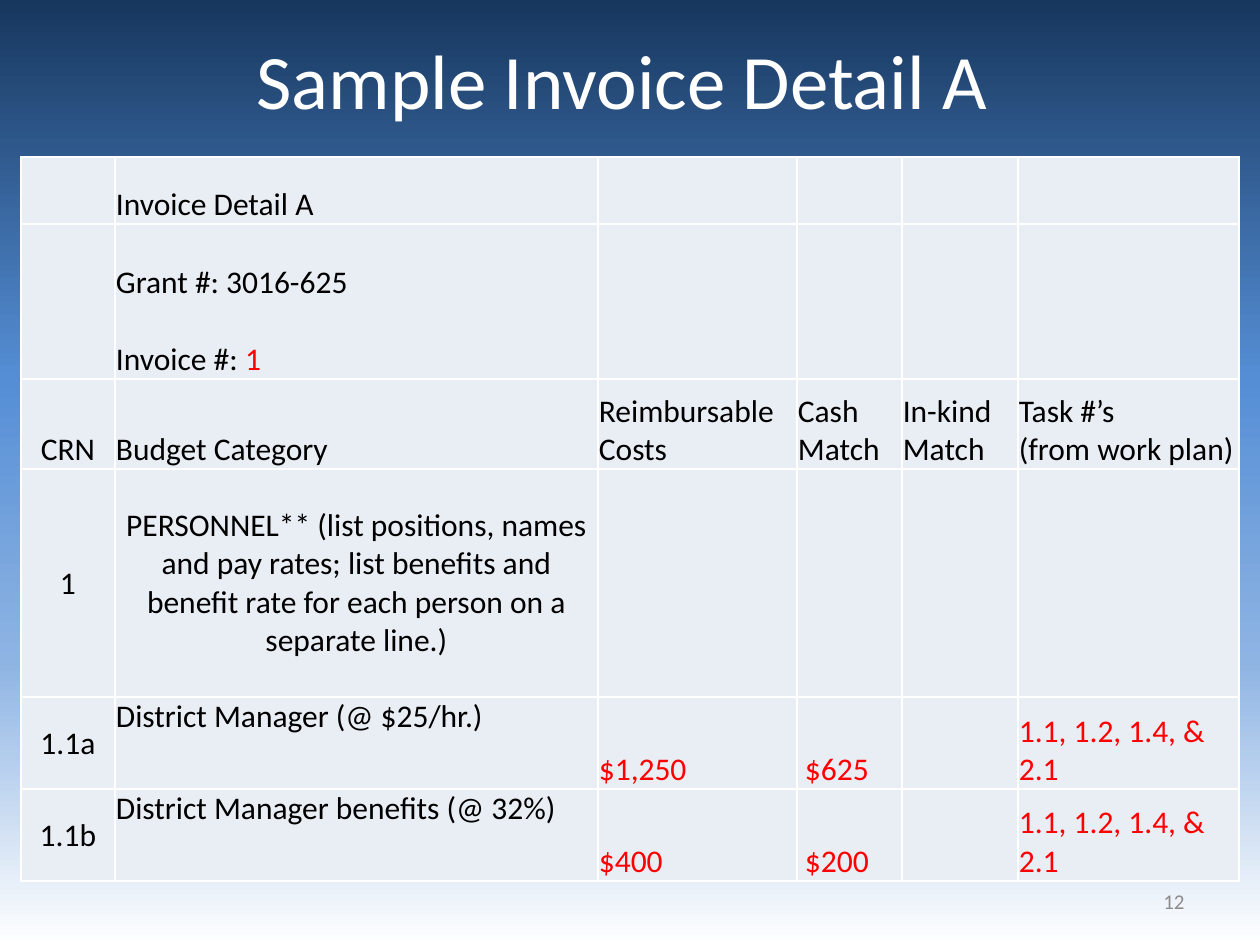
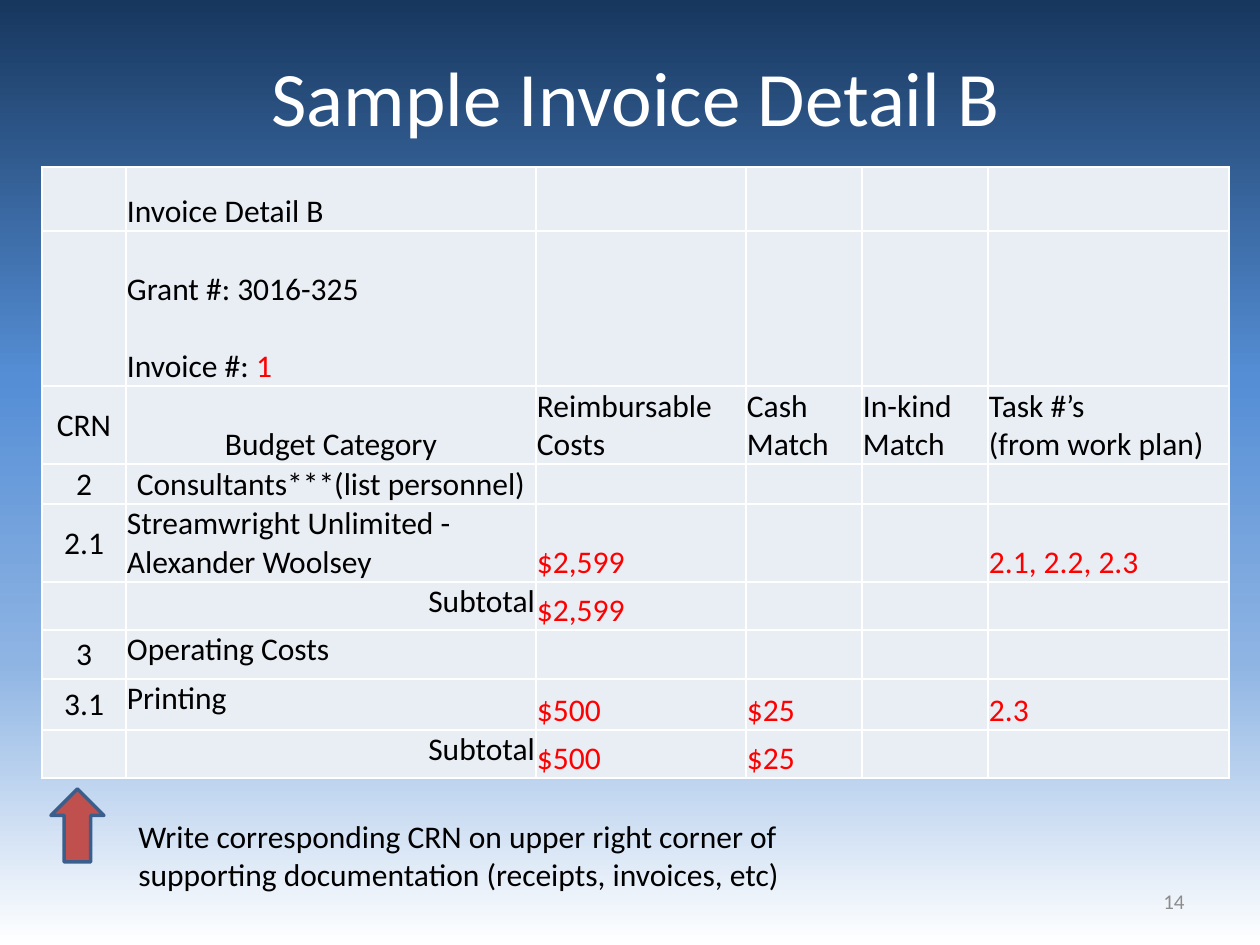
import dataclasses

import lxml.etree
import pptx
import pptx.dml.color
import pptx.enum.shapes
import pptx.enum.text
import pptx.oxml.ns
import pptx.presentation
import pptx.shapes.base
import pptx.slide
import pptx.table
import pptx.text.text
import pptx.util

PIXELS_PER_INCH = 126
SLIDE_WIDTH, SLIDE_HEIGHT = 1260, 945
TITLE_ONLY_LAYOUT = 5

Align = pptx.enum.text.PP_ALIGN
Anchor = pptx.enum.text.MSO_ANCHOR


@dataclasses.dataclass(frozen=True)
class Theme:
    font: str = "Calibri"
    title_size: int = 44
    body_size: int = 18
    number_size: int = 12
    line_height: int = 22
    white: str = "FFFFFF"
    black: str = "000000"
    entry: str = "FF0000"
    number: str = "8C8C8C"
    cell_fill: str = "E9EDF4"
    arrow_fill: str = "C0504D"
    arrow_line: str = "3A5F8C"
    background: tuple[tuple[int, str], ...] = (
        (0, "17375E"), (40, "558ED5"), (70, "8EB4E3"), (100, "FFFFFF"))


THEME = Theme()


@dataclasses.dataclass(frozen=True)
class Box:
    left: int
    top: int
    width: int
    height: int

    def emu(self) -> tuple[int, int, int, int]:
        return px(self.left), px(self.top), px(self.width), px(self.height)


@dataclasses.dataclass(frozen=True)
class Cell:
    """A table cell: printed text, followed by what the grantee fills in."""
    text: str = ""
    entry: str = ""
    align: Align = Align.LEFT
    anchor: Anchor = Anchor.BOTTOM
    gap: int = 0


@dataclasses.dataclass(frozen=True)
class InvoiceSlide:
    title: str
    title_box: Box
    number: int
    table_left: int
    table_top: int
    column_widths: list[int]
    row_heights: list[int]
    rows: list[list[Cell]]


def px(length: int) -> int:
    return pptx.util.Emu(length * 914400 // PIXELS_PER_INCH)


def rgb(color: str) -> pptx.dml.color.RGBColor:
    return pptx.dml.color.RGBColor.from_string(color)


def centred(text: str) -> Cell:
    return Cell(text, align=Align.CENTER, anchor=Anchor.MIDDLE)


def item(text: str) -> Cell:
    return Cell(text, anchor=Anchor.TOP)


def entry(text: str) -> Cell:
    return Cell(entry=text)


def heading_rows(letter: str, grant: str, crn: Cell, category: Cell) -> list[list[Cell]]:
    """The three rows that open every invoice table."""
    return [
        [Cell(), Cell(f"Invoice Detail {letter}")],
        [Cell(), Cell(f"Grant #: {grant}\nInvoice #: ", entry="1", gap=THEME.line_height)],
        [crn, category, Cell("Reimbursable Costs"), Cell("Cash Match"),
         Cell("In-kind Match"), Cell("Task #’s\n(from work plan)")],
    ]


def write(
    frame: pptx.text.text.TextFrame, text: str, *, entry_text: str = "",
    size: int = THEME.body_size, color: str = THEME.black,
    align: Align = Align.LEFT, anchor: Anchor = Anchor.TOP, gap: int = 0,
) -> None:
    """Write one paragraph per line; entry_text ends the last one in the entry colour."""
    frame.word_wrap = True
    frame.vertical_anchor = anchor
    lines = text.split("\n")
    for index, line in enumerate(lines):
        paragraph = frame.paragraphs[0] if index == 0 else frame.add_paragraph()
        paragraph.alignment = align
        if index and gap:
            paragraph.space_before = pptx.util.Pt(gap)
        pieces = [(line, color)]
        if index == len(lines) - 1:
            pieces.append((entry_text, THEME.entry))
        for piece, piece_color in pieces:
            if piece:
                run = paragraph.add_run()
                run.text = piece
                run.font.name = THEME.font
                run.font.size = pptx.util.Pt(size)
                run.font.color.rgb = rgb(piece_color)


def add_text(slide: pptx.slide.Slide, box: Box, text: str, **text_format) -> None:
    write(slide.shapes.add_textbox(*box.emu()).text_frame, text, **text_format)


def add_solid_fill(parent: lxml.etree.ElementBase, color: str) -> None:
    qn = pptx.oxml.ns.qn
    fill = lxml.etree.SubElement(parent, qn("a:solidFill"))
    lxml.etree.SubElement(fill, qn("a:srgbClr"), val=color)


def set_background(master: pptx.slide.SlideMaster) -> None:
    qn = pptx.oxml.ns.qn
    fill = master.background.fill
    fill.gradient()
    fill.gradient_angle = 270
    stops = master.element.xpath(".//p:bg//a:gsLst")[0]
    for stop in list(stops):
        stops.remove(stop)
    for percent, color in THEME.background:
        stop = lxml.etree.SubElement(stops, qn("a:gs"), pos=str(percent * 1000))
        lxml.etree.SubElement(stop, qn("a:srgbClr"), val=color)


def style_cell(cell: pptx.table._Cell) -> None:
    cell.margin_left = cell.margin_top = cell.margin_right = px(1)
    cell.margin_bottom = 0
    properties = cell._tc.get_or_add_tcPr()
    for side in ("L", "R", "T", "B"):
        border = lxml.etree.SubElement(
            properties, pptx.oxml.ns.qn(f"a:ln{side}"), w=str(pptx.util.Pt(1)))
        add_solid_fill(border, THEME.white)
    cell.fill.solid()
    cell.fill.fore_color.rgb = rgb(THEME.cell_fill)


def add_invoice_table(slide: pptx.slide.Slide, invoice: InvoiceSlide) -> None:
    box = Box(invoice.table_left, invoice.table_top,
              sum(invoice.column_widths), sum(invoice.row_heights))
    table = slide.shapes.add_table(
        len(invoice.row_heights), len(invoice.column_widths), *box.emu()).table
    table.first_row = table.horz_banding = False
    for column, width in zip(table.columns, invoice.column_widths):
        column.width = px(width)
    for row, height, contents in zip(table.rows, invoice.row_heights, invoice.rows):
        row.height = px(height)
        for cell in row.cells:
            style_cell(cell)
        for cell, content in zip(row.cells, contents):
            write(cell.text_frame, content.text, entry_text=content.entry,
                  align=content.align, gap=content.gap)
            cell.vertical_anchor = content.anchor


def add_invoice_slide(
    presentation: pptx.presentation.Presentation, invoice: InvoiceSlide,
) -> pptx.slide.Slide:
    slide = presentation.slides.add_slide(presentation.slide_layouts[TITLE_ONLY_LAYOUT])
    title = slide.shapes.title
    title.left, title.top, title.width, title.height = invoice.title_box.emu()
    write(title.text_frame, invoice.title, size=THEME.title_size, color=THEME.white,
          align=Align.CENTER, anchor=Anchor.MIDDLE)
    add_invoice_table(slide, invoice)
    add_text(slide, Box(903, 876, 294, 50), str(invoice.number), size=THEME.number_size,
             color=THEME.number, align=Align.RIGHT, anchor=Anchor.MIDDLE)
    return slide


def add_crn_note(slide: pptx.slide.Slide) -> None:
    arrow = slide.shapes.add_shape(
        pptx.enum.shapes.MSO_SHAPE.UP_ARROW, *Box(51, 789, 53, 73).emu())
    arrow.shadow.inherit = False
    arrow.fill.solid()
    arrow.fill.fore_color.rgb = rgb(THEME.arrow_fill)
    arrow.line.color.rgb = rgb(THEME.arrow_line)
    arrow.line.width = pptx.util.Pt(2)
    add_text(slide, Box(126, 811, 680, 89),
             "Write corresponding CRN on upper right corner of supporting "
             "documentation (receipts, invoices, etc)")


SUBTOTAL = Cell("Subtotal", align=Align.RIGHT, anchor=Anchor.TOP)

DETAIL_A = InvoiceSlide(
    title="Sample Invoice Detail A ",
    title_box=Box(64, 0, 1134, 157),
    number=12,
    table_left=21,
    table_top=157,
    column_widths=[94, 483, 199, 105, 116, 221],
    row_heights=[67, 155, 90, 228, 92, 92],
    rows=heading_rows("A", "3016-625", Cell("CRN", align=Align.CENTER),
                      Cell("Budget Category")) + [
        [centred("1"),
         centred("PERSONNEL** (list positions, names and pay rates; list benefits "
                 "and benefit rate for each person on a separate line.)")],
        [centred("1.1a"), item("District Manager (@ $25/hr.)"), entry("$1,250"),
         entry(" $625"), Cell(), entry("1.1, 1.2, 1.4, & 2.1")],
        [centred("1.1b"), item("District Manager benefits (@ 32%)"), entry("$400"),
         entry(" $200"), Cell(), entry("1.1, 1.2, 1.4, & 2.1")],
    ],
)

DETAIL_B = InvoiceSlide(
    title="Sample Invoice Detail B",
    title_box=Box(69, 24, 1134, 144),
    number=14,
    table_left=42,
    table_top=167,
    column_widths=[84, 410, 210, 116, 126, 241],
    row_heights=[64, 155, 78, 40, 78, 48, 49, 51, 48],
    rows=heading_rows("B", "3016-325", centred("CRN"),
                      Cell("Budget Category", align=Align.CENTER)) + [
        [centred("2"), centred("Consultants***(list personnel)")],
        [centred("2.1"), item("Streamwright Unlimited - Alexander Woolsey"),
         entry("$2,599"), Cell(), Cell(), entry("2.1, 2.2, 2.3")],
        [Cell(), SUBTOTAL, entry("$2,599")],
        [centred("3"), item("Operating Costs")],
        [centred("3.1"), item("Printing"), entry("$500"), entry("$25"), Cell(), entry("2.3")],
        [Cell(), SUBTOTAL, entry("$500"), entry("$25")],
    ],
)


def main() -> None:
    presentation = pptx.Presentation()
    presentation.slide_width = px(SLIDE_WIDTH)
    presentation.slide_height = px(SLIDE_HEIGHT)
    set_background(presentation.slide_master)
    add_invoice_slide(presentation, DETAIL_A)
    add_crn_note(add_invoice_slide(presentation, DETAIL_B))
    presentation.save("out.pptx")


if __name__ == "__main__":
    main()
